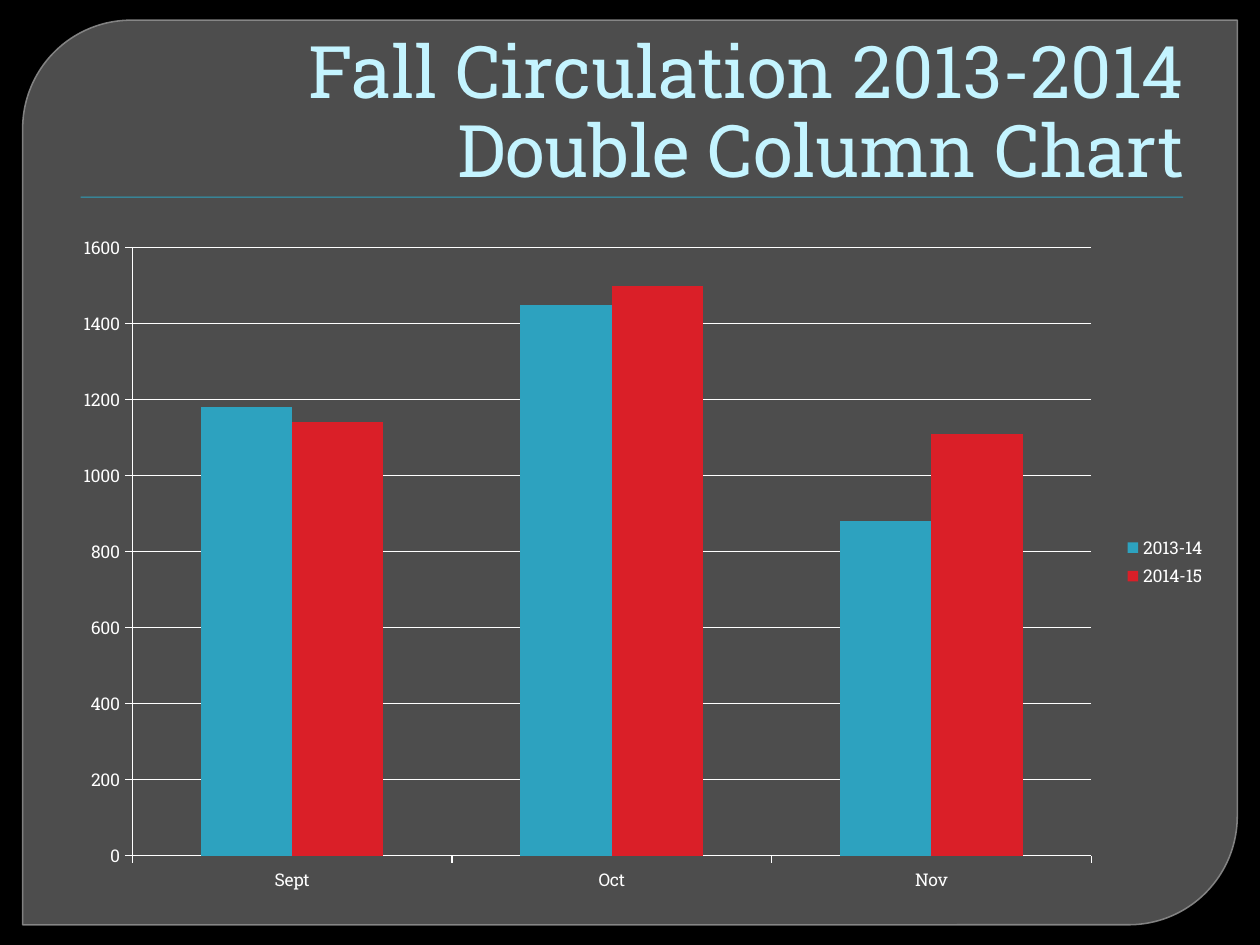
from lxml import etree
from pptx import Presentation
from pptx.chart.data import CategoryChartData
from pptx.dml.color import RGBColor
from pptx.enum.chart import XL_CHART_TYPE, XL_LEGEND_POSITION, XL_TICK_MARK
from pptx.enum.shapes import MSO_SHAPE
from pptx.enum.text import MSO_ANCHOR, MSO_AUTO_SIZE, PP_ALIGN
from pptx.oxml import parse_xml
from pptx.oxml.ns import nsdecls, qn
from pptx.util import Inches, Pt

COLUMNS = XL_CHART_TYPE.COLUMN_CLUSTERED
LEGEND_RIGHT = XL_LEGEND_POSITION.RIGHT
OUTSIDE, CROSS = XL_TICK_MARK.OUTSIDE, XL_TICK_MARK.CROSS
PANEL, BAR = MSO_SHAPE.ROUND_2_DIAG_RECTANGLE, MSO_SHAPE.RECTANGLE
BOTTOM, NO_FIT, RIGHT = MSO_ANCHOR.BOTTOM, MSO_AUTO_SIZE.NONE, PP_ALIGN.RIGHT

FONT = "Roboto Slab"
COLORS = {
    "background": "000000",
    "panel": "777777",
    "edge": "8E8E8E",
    "title": "C4F4FF",
    "text": "FFFFFF",
    "teal": "2DA2BF",
    "red": "DA1F28",
}
MONTHS = ["Sept", "Oct", "Nov"]
CIRCULATION = [
    ("2013-14", [1180, 1450, 880], "teal"),
    ("2014-15", [1140, 1500, 1110], "red"),
]
PLOT_AREA = {"x": 0.06, "y": 0.04, "w": 0.83, "h": 0.89}


def rgb(name):
    """Return the named colour."""
    return RGBColor.from_string(COLORS[name])


def set_alpha(fill, percent):
    """Make a solid fill partly transparent."""
    color = fill._xPr.find(qn("a:solidFill"))[0]
    etree.SubElement(color, qn("a:alpha")).set("val", str(percent * 1000))


def add_box(slide, kind, left, top, width, height, fill, alpha=100, line=None):
    """Add a filled preset shape without a shadow."""
    sp = slide.shapes.add_shape(
        kind, Inches(left), Inches(top), Inches(width), Inches(height))
    sp.shadow.inherit = False
    sp.fill.solid()
    sp.fill.fore_color.rgb = rgb(fill)
    set_alpha(sp.fill, alpha)
    if line:
        sp.line.color.rgb = rgb(line)
        sp.line.width = Pt(0.87)
        set_alpha(sp.line.fill, 88)
    else:
        sp.line.fill.background()
    return sp


def write_text(tf, lines, size, color, align, spacing):
    """Write lines of one paragraph, parted by line breaks."""
    p = tf.paragraphs[0]
    p.alignment = align
    p.line_spacing = spacing
    for i, line in enumerate(lines):
        if i:
            p.add_line_break()
        r = p.add_run()
        r.text = line
        r.font.name = FONT
        r.font.size = Pt(size)
        r.font.color.rgb = rgb(color)


def place_title(slide, lines):
    """Move and format the title, and bring it in front of the panel."""
    title = slide.shapes.title
    title.left, title.top = Inches(0.5), Inches(0.28)
    title.width, title.height = Inches(9), Inches(1.25)
    tf = title.text_frame
    tf.word_wrap = True
    tf.auto_size = NO_FIT
    tf.vertical_anchor = BOTTOM
    tf.margin_top = tf.margin_bottom = 0
    write_text(tf, lines, size=41.4, color="title", align=RIGHT, spacing=0.9)
    slide.shapes._spTree.append(title._element)


def set_plot_area(chart, area):
    """Fix the inner plot area as fractions of the chart."""
    plot = chart._chartSpace.chart.plotArea
    for old in plot.findall(qn("c:layout")):
        plot.remove(old)
    sizes = "".join(f'<c:{k} val="{v}"/>' for k, v in area.items())
    plot.insert(0, parse_xml(
        f'<c:layout {nsdecls("c")}><c:manualLayout>'
        '<c:layoutTarget val="inner"/><c:xMode val="edge"/><c:yMode val="edge"/>'
        f'{sizes}</c:manualLayout></c:layout>'))


def add_column_chart(slide, left, top, width, height):
    """Add the circulation chart with its axes and legend."""
    data = CategoryChartData()
    data.categories = MONTHS
    for name, values, _ in CIRCULATION:
        data.add_series(name, values)
    chart = slide.shapes.add_chart(
        COLUMNS, Inches(left), Inches(top), Inches(width), Inches(height), data).chart
    chart.has_title = False
    chart.font.name = FONT
    chart.font.size = Pt(10)
    chart.font.color.rgb = rgb("text")
    chart.has_legend = True
    chart.legend.position = LEGEND_RIGHT
    chart.legend.include_in_layout = False

    plot = chart.plots[0]
    plot.gap_width, plot.overlap = 150, 0
    plot.vary_by_categories = False
    for series, (_, _, color) in zip(plot.series, CIRCULATION):
        series.format.fill.solid()
        series.format.fill.fore_color.rgb = rgb(color)

    value_axis = chart.value_axis
    value_axis.minimum_scale, value_axis.maximum_scale = 0, 1600
    value_axis.major_unit = 200
    value_axis.has_major_gridlines = True
    for axis in (chart.category_axis, value_axis):
        axis.major_tick_mark = OUTSIDE
    for part in (chart.category_axis, value_axis, value_axis.major_gridlines):
        part.format.line.color.rgb = rgb("text")
        part.format.line.width = Pt(0.75)
    set_plot_area(chart, PLOT_AREA)


def main():
    """Build and save the slide."""
    prs = Presentation()
    prs.slide_width, prs.slide_height = Inches(10), Inches(7.5)
    slide = prs.slides.add_slide(prs.slide_layouts[5])
    slide.background.fill.solid()
    slide.background.fill.fore_color.rgb = rgb("background")

    panel = add_box(slide, PANEL, 0.18, 0.16, 9.64, 7.18, "panel", alpha=65, line="edge")
    panel.adjustments[0], panel.adjustments[1] = 0.12, 0
    add_box(slide, BAR, 0.64, 1.56, 8.75, 0.01, "teal")
    place_title(slide, ["Fall Circulation 2013-2014", "Double Column Chart"])
    add_column_chart(slide, 0.5, 1.75, 9.17, 5.42)
    prs.save("out.pptx")


if __name__ == "__main__":
    main()
